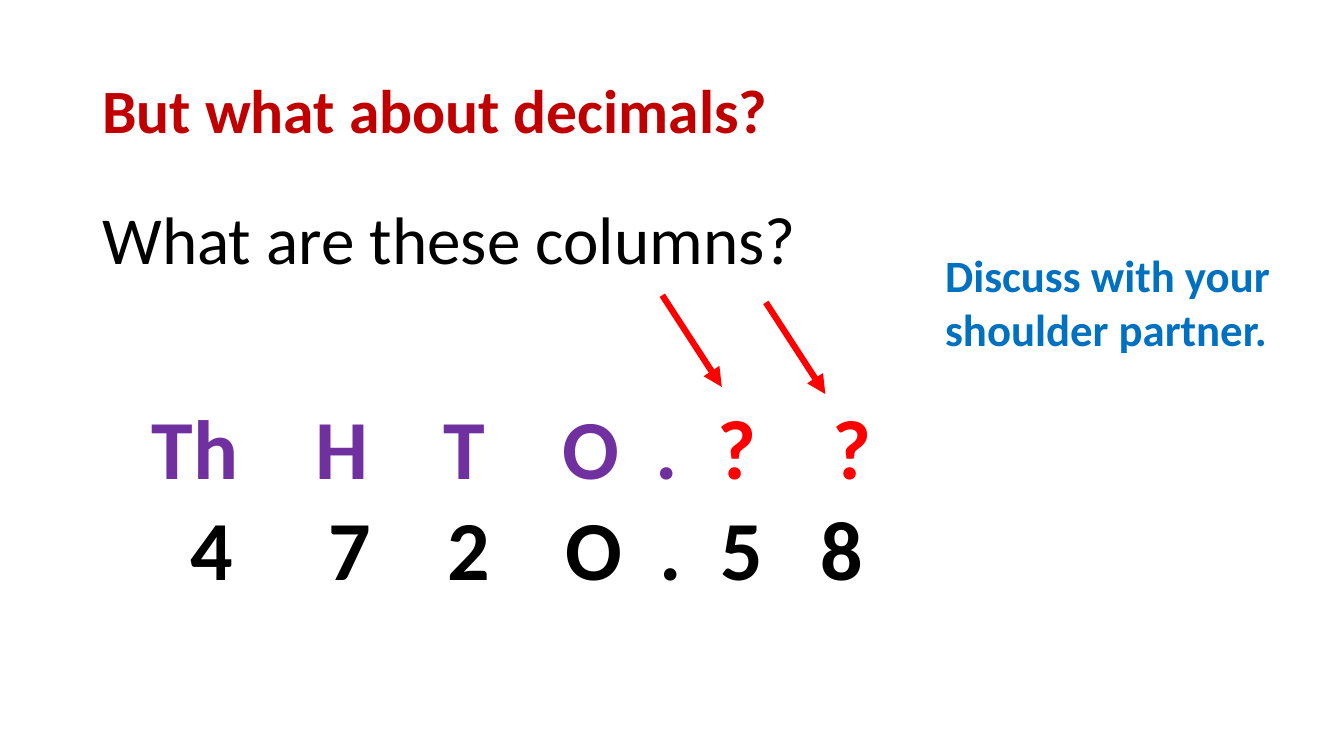
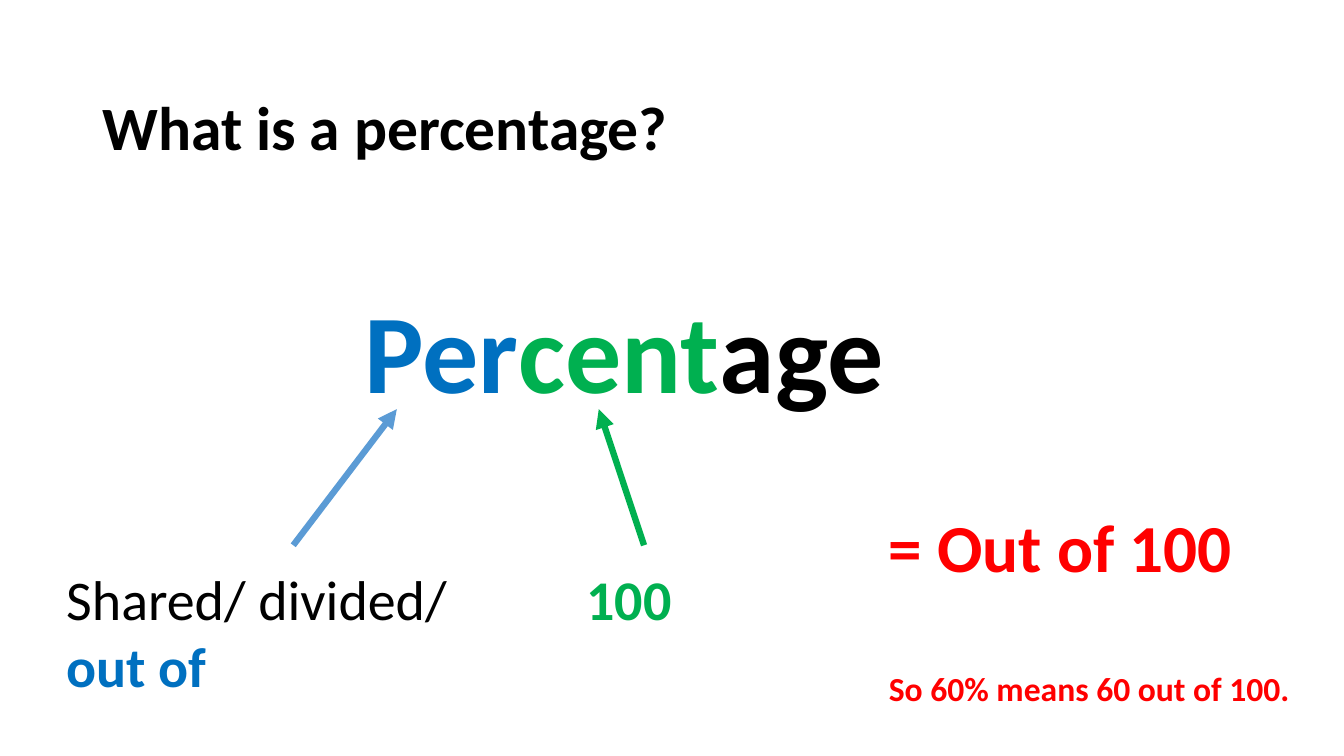
from lxml import etree
from pptx import Presentation
from pptx.dml.color import RGBColor
from pptx.enum.shapes import MSO_CONNECTOR
from pptx.enum.text import MSO_ANCHOR
from pptx.oxml.ns import qn
from pptx.util import Cm, Pt

STRAIGHT = MSO_CONNECTOR.STRAIGHT
TOP = MSO_ANCHOR.TOP
MIDDLE = MSO_ANCHOR.MIDDLE

FONT = "Calibri"
BLACK = "000000"
DARK_RED = "C00000"
RED = "FF0000"
PURPLE = "7030A0"
BLUE = "0070C0"
LIGHT_BLUE = "5B9BD5"
GREEN = "00B050"

HEADING = {"size": Pt(44), "bold": True}
QUESTION = {"size": Pt(48), "bold": False}
DIGITS = {"size": Pt(60), "bold": True}
PROMPT = {"size": Pt(32), "bold": True}
WORD = {"size": Pt(80), "bold": True}
MEANING = {"size": Pt(40), "bold": False}
MEANING_BOLD = {"size": Pt(40), "bold": True}
RESULT = {"size": Pt(48), "bold": True}
EXAMPLE = {"size": Pt(24), "bold": True}

SINGLE = {}
BODY = {"line_spacing": 0.9, "space_before": Pt(10)}
TITLE = {"line_spacing": 0.9}
AFTER_GAP = {"space_before": Pt(59)}


def add_text(slide, place, paragraphs, anchor=TOP, tabs=()):
    box = slide.shapes.add_textbox(*[Cm(length) for length in place])
    frame = box.text_frame
    frame.word_wrap = True
    frame.vertical_anchor = anchor
    for index, (spacing, spans) in enumerate(paragraphs):
        para = frame.add_paragraph() if index else frame.paragraphs[0]
        for name, value in spacing.items():
            setattr(para, name, value)
        if tabs:
            stops = etree.SubElement(para._p.get_or_add_pPr(), qn("a:tabLst"))
            for stop in tabs:
                etree.SubElement(stops, qn("a:tab"), pos=str(Cm(stop)), algn="l")
        for text, style, color in spans:
            span = para.add_run()
            span.text = text
            span.font.name = FONT
            span.font.color.rgb = RGBColor.from_string(color)
            for name, value in style.items():
                setattr(span.font, name, value)


def add_arrow(slide, start, end, color):
    arrow = slide.shapes.add_connector(
        STRAIGHT, *[Cm(length) for length in start + end])
    arrow.line.color.rgb = RGBColor.from_string(color)
    arrow.line.width = Pt(4.5)
    etree.SubElement(arrow.line._get_or_add_ln(), qn("a:tailEnd"), type="triangle")
    etree.SubElement(arrow._element.spPr, qn("a:effectLst"))


deck = Presentation()
deck.slide_width = Cm(33.87)
deck.slide_height = Cm(19.05)
blank = deck.slide_layouts[6]

decimals = deck.slides.add_slide(blank)
add_text(decimals, (2.33, 1.01, 29.21, 3.68),
         [(TITLE, [("But what about decimals?", HEADING, DARK_RED)])], MIDDLE)
add_text(decimals, (2.33, 5.08, 18.5, 2.36),
         [(BODY, [("What are these columns?", QUESTION, BLACK)])])
add_text(decimals, (3.58, 10.13, 20.65, 2.03),
         [(BODY, [("Th\tH\tT\tO\t.\t", DIGITS, PURPLE), ("?\t?", DIGITS, RED)])],
         tabs=(4.11, 7.35, 10.34, 12.7, 14.25, 17.15))
add_text(decimals, (4.55, 12.67, 20.65, 2.03),
         [(BODY, [("4\t7\t2\tO\t.\t5\t8", DIGITS, BLACK)])],
         tabs=(3.48, 6.47, 9.45, 11.83, 13.36, 15.87))
for left, top in ((16.69, 7.44), (19.3, 7.62)):
    add_arrow(decimals, (left, top), (left + 1.5, top + 2.31), RED)
add_text(decimals, (23.57, 6.12, 8.99, 3),
         [(SINGLE, [("Discuss with your shoulder partner.", PROMPT, BLUE)])])

percentage = deck.slides.add_slide(blank)
add_text(percentage, (2.33, 2.33, 29.21, 3.28),
         [(BODY, [("What is a percentage?", HEADING, BLACK)])])
add_text(percentage, (8.94, 6.96, 15.57, 4.45),
         [(SINGLE, [("Per", WORD, BLUE), ("cent", WORD, GREEN), ("age", WORD, BLACK)])])
for start_left, end_left, color in ((7.39, 10, LIGHT_BLUE), (16.23, 15.09, GREEN)):
    add_arrow(percentage, (start_left, 13.74), (end_left, 10.31), color)
add_text(percentage, (1.42, 14.1, 10.34, 3.68),
         [(SINGLE, [("Shared/ divided/ ", MEANING, BLACK),
                    ("out of", MEANING_BOLD, BLUE)])])
add_text(percentage, (14.53, 14.1, 10.34, 1.96),
         [(SINGLE, [("100", MEANING_BOLD, GREEN)])])
add_text(percentage, (22.15, 12.6, 11.48, 5.38),
         [(SINGLE, [("= Out of 100", RESULT, RED)]),
          (AFTER_GAP, [("So 60% means 60 out of 100.", EXAMPLE, RED)])])

deck.save("out.pptx")
